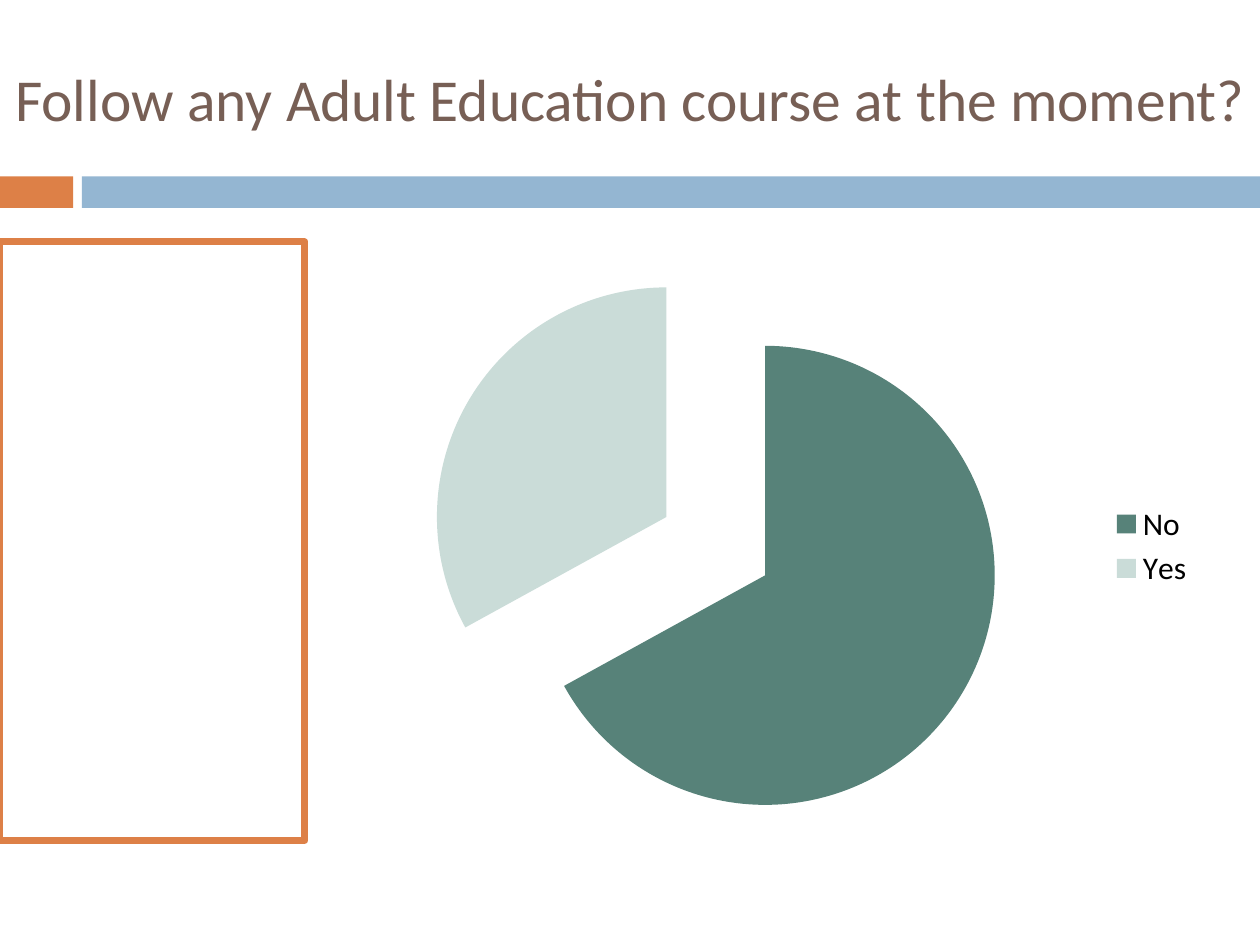
from dataclasses import dataclass
from typing import Optional

from lxml.etree import Element
from pptx import Presentation
from pptx.chart.data import CategoryChartData
from pptx.dml.color import RGBColor
from pptx.enum.chart import XL_CHART_TYPE as ChartType, XL_LEGEND_POSITION as LegendPosition
from pptx.enum.shapes import MSO_SHAPE as ShapeType
from pptx.enum.text import MSO_ANCHOR as Anchor, PP_ALIGN as Align
from pptx.oxml.ns import qn
from pptx.util import Inches, Pt

ORANGE = RGBColor(0xDD, 0x80, 0x47)
BLUE = RGBColor(0x94, 0xB6, 0xD2)
BROWN = RGBColor(0x77, 0x5F, 0x55)
BLACK = RGBColor(0, 0, 0)
DARK_GREEN = RGBColor(0x57, 0x82, 0x79)
PALE_GREEN = RGBColor(0xCA, 0xDC, 0xD8)
FONT = "Calibri"

SLIDE_WIDTH, SLIDE_HEIGHT = 10, 7.5
BAND_TOP, BAND_HEIGHT = 1.4, 0.25
BAND_SPLIT = 0.65
CONTENT_TOP = 1.92


@dataclass(frozen=True)
class Box:
    left: float
    top: float
    width: float
    height: float

    def lengths(self) -> tuple:
        return tuple(Inches(v) for v in (self.left, self.top, self.width, self.height))


@dataclass(frozen=True)
class Panel:
    box: Box
    fill: Optional[RGBColor] = None
    line: Optional[RGBColor] = None


@dataclass(frozen=True)
class Answer:
    label: str
    percent: int
    color: RGBColor


PANELS = (
    Panel(Box(0, BAND_TOP, 0.58, BAND_HEIGHT), fill=ORANGE),
    Panel(Box(BAND_SPLIT, BAND_TOP, SLIDE_WIDTH - BAND_SPLIT, BAND_HEIGHT), fill=BLUE),
    Panel(Box(0, CONTENT_TOP, 2.42, 4.75), line=ORANGE),
)
ANSWERS = (Answer("No", 67, DARK_GREEN), Answer("Yes", 33, PALE_GREEN))


def format_title(title, text: str, box: Box) -> None:
    title.left, title.top, title.width, title.height = box.lengths()
    frame = title.text_frame
    frame.word_wrap = True
    frame.vertical_anchor = Anchor.MIDDLE
    paragraph = frame.paragraphs[0]
    paragraph.alignment = Align.CENTER
    run = paragraph.add_run()
    run.text = text
    run.font.name, run.font.size = FONT, Pt(34)
    run.font.color.rgb = BROWN


def add_panel(slide, panel: Panel) -> None:
    shape = slide.shapes.add_shape(ShapeType.RECTANGLE, *panel.box.lengths())
    shape.shadow.inherit = False
    if panel.fill is None:
        shape.fill.background()
    else:
        shape.fill.solid()
        shape.fill.fore_color.rgb = panel.fill
    if panel.line is None:
        shape.line.fill.background()
    else:
        shape.line.color.rgb = panel.line
        shape.line.width = Pt(4)


def explode(series, percent: int) -> None:
    """Pull all slices of a pie series away from its centre."""
    explosion = Element(qn("c:explosion"), val=str(percent))
    series._element.find(qn("c:dPt")).addprevious(explosion)


def add_pie(slide, box: Box, answers: tuple[Answer, ...]) -> None:
    data = CategoryChartData()
    data.categories = [answer.label for answer in answers]
    data.add_series("Series 1", [answer.percent for answer in answers])
    chart = slide.shapes.add_chart(ChartType.PIE, *box.lengths(), data).chart
    chart.has_title = False
    chart.font.name, chart.font.size = FONT, Pt(18)
    chart.font.color.rgb = BLACK
    chart.has_legend = True
    chart.legend.position = LegendPosition.RIGHT
    chart.legend.include_in_layout = False
    plot = chart.plots[0]
    plot.vary_by_categories = True
    series = plot.series[0]
    for index, answer in enumerate(answers):
        fill = series.points[index].format.fill
        fill.solid()
        fill.fore_color.rgb = answer.color
    explode(series, 25)


def main() -> None:
    presentation = Presentation()
    presentation.slide_width = Inches(SLIDE_WIDTH)
    presentation.slide_height = Inches(SLIDE_HEIGHT)
    slide = presentation.slides.add_slide(presentation.slide_layouts.get_by_name("Title Only"))
    format_title(slide.shapes.title, "Follow any Adult Education course at the moment?",
                 Box(0, 0.3, SLIDE_WIDTH, 0.95))
    for panel in PANELS:
        add_panel(slide, panel)
    add_pie(slide, Box(2.58, CONTENT_TOP, 7, 4.83), ANSWERS)
    presentation.save("out.pptx")


if __name__ == "__main__":
    main()
